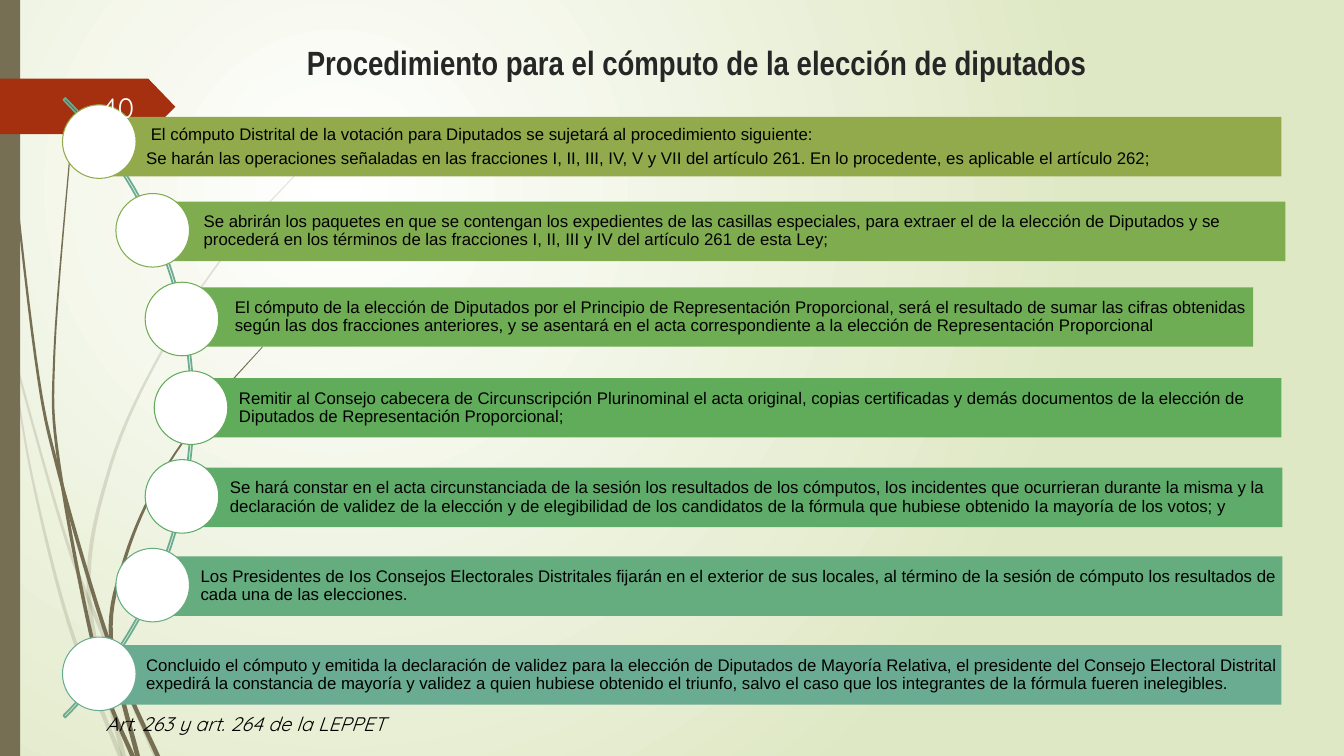
from lxml import etree
from pptx import Presentation
from pptx.dml.color import RGBColor
from pptx.enum.shapes import MSO_SHAPE
from pptx.enum.text import MSO_ANCHOR, PP_ALIGN
from pptx.oxml.ns import qn
from pptx.util import Inches, Pt

RECT, OVAL, ARC = MSO_SHAPE.RECTANGLE, MSO_SHAPE.OVAL, MSO_SHAPE.BLOCK_ARC
TOP, MIDDLE = MSO_ANCHOR.TOP, MSO_ANCHOR.MIDDLE
CENTER, LEFT, RIGHT = PP_ALIGN.CENTER, PP_ALIGN.LEFT, PP_ALIGN.RIGHT
OLIVE, RUST, WHITE = "766F54", "A53010", "FFFFFF"
CURVE_STEPS = 8


def paint(shape, fill=None, line=None, width=0.75):
    shape.shadow.inherit = False
    if fill:
        shape.fill.solid()
        shape.fill.fore_color.rgb = RGBColor.from_string(fill)
    else:
        shape.fill.background()
    if line:
        shape.line.color.rgb = RGBColor.from_string(line)
        shape.line.width = Pt(width)
    else:
        shape.line.fill.background()


def write(paragraph, text, size, font, color, align=LEFT, bold=False, italic=False):
    paragraph.alignment = align
    run = paragraph.add_run()
    run.text = text
    run.font.size, run.font.name = Pt(size), font
    run.font.bold, run.font.italic = bold, italic
    run.font.color.rgb = RGBColor.from_string(color)


prs = Presentation()
prs.slide_width, prs.slide_height = Inches(13.33), Inches(7.5)
slide = prs.slides.add_slide(prs.slide_layouts[5])
shapes = slide.shapes

# Background: radial glow centred in the upper left
backdrop = slide.background.fill
backdrop.gradient()
for stop, color in zip(backdrop.gradient_stops, (WHITE, "DFE8C4")):
    stop.color.rgb = RGBColor.from_string(color)
gradient = backdrop._xPr.find(qn("a:gradFill"))
gradient.remove(gradient.find(qn("a:lin")))
glow = etree.SubElement(gradient, qn("a:path"), path="circle")
etree.SubElement(glow, qn("a:fillToRect"), l="50000", t="50000", r="100000", b="100000")

# Grass blades: opacity, then points of a smooth stem that widens downwards
blades = [
    (20, [(0, 2.9), (.15, 3.6), (.6, 5.22), (.9, 6.05), (1.52, 7.5)]),
    (20, [(.11, 3.5), (.3, 4.7), (.67, 6.2), (1.17, 7.5)]),
    (20, [(3.12, 1.53), (2.28, 2.45), (1.59, 3.49), (1.08, 4.62), (.86, 5.9), (1.2, 7.5)]),
    (100, [(.03, 0), (.07, 1.1), (.34, 3.55), (.57, 4.7), (1.07, 6.4), (1.54, 7.5)]),
    (100, [(.7, 1.41), (.53, 3.49), (.57, 4.6), (.95, 6.58), (1.29, 7.5)]),
    (100, [(2.6, 3.44), (2.05, 4.06), (1.57, 4.75), (1.23, 5.52), (1.08, 6.33), (1.34, 7.5)]),
]
for opacity, stem in blades:
    padded = [stem[0], *stem, stem[-1]]
    curve = [stem[0]]
    for a, b, c, d in zip(padded, padded[1:], padded[2:], padded[3:]):
        for step in range(1, CURVE_STEPS + 1):
            t = step / CURVE_STEPS
            curve.append([b[k] + t * (c[k] - a[k]) / 2
                          + t * t * (a[k] - 2.5 * b[k] + 2 * c[k] - d[k] / 2)
                          + t ** 3 * (3 * (b[k] - c[k]) + d[k] - a[k]) / 2 for k in (0, 1)])
    right_edge = [(x + 0.01 + 0.04 * i / len(curve), y) for i, (x, y) in enumerate(curve)]
    builder = shapes.build_freeform(Inches(stem[0][0]), Inches(stem[0][1]))
    builder.add_line_segments([(Inches(x), Inches(y)) for x, y in curve[1:] + right_edge[::-1]])
    grass = builder.convert_to_shape()
    paint(grass, OLIVE)
    tint = grass.fill._xPr.find(".//" + qn("a:srgbClr"))
    etree.SubElement(tint, qn("a:alpha"), val=str(opacity * 1000))

# Side band and page-number tab
paint(shapes.add_shape(RECT, 0, 0, Inches(0.2), Inches(7.5)), OLIVE)
builder = shapes.build_freeform(0, Inches(0.78))
builder.add_line_segments([(Inches(x), Inches(y)) for x, y in
                           [(1.47, .78), (1.74, 1.06), (1.47, 1.33), (0, 1.33)]])
paint(builder.convert_to_shape(), RUST)

# Title
title = shapes.title
title.left, title.top, title.width, title.height = map(Inches, (1.68, 0.37, 9.97, 0.81))
title.text_frame.vertical_anchor = TOP
title.text_frame.margin_left = Inches(0.59)
write(title.text_frame.paragraphs[0], "Procedimiento para el cómputo de la elección de diputados",
      24, "Arial Narrow", "262626", CENTER, bold=True)

# Arc that links the steps
arc = shapes.add_shape(ARC, *map(Inches, (-6.77, -0.3, 8.69, 8.69)))
for i, value in enumerate((189, 27, 0.003)):
    arc.adjustments[i] = value
paint(arc, line="6AAC91", width=1.25)

# Steps: bar left, top, width, circle left, colour, paragraphs
steps = [
    (0.98, 1.16, 11.73, 0.62, "92AA4C", [
        " El cómputo Distrital de la votación para Diputados se sujetará al procedimiento siguiente:",
        "Se harán las operaciones señaladas en las fracciones I, II, III, IV, V y VII del artículo 261. En lo procedente, es aplicable el artículo 262;"]),
    (1.55, 2, 11.2, 1.15, "80AC50", ["Se abrirán los paquetes en que se contengan los expedientes de las casillas especiales, para extraer el de la elección de Diputados y se procederá en los términos de las fracciones I, II, III y IV del artículo 261 de esta Ley;"]),
    (1.86, 2.85, 10.57, 1.44, "6FAD54", ["El cómputo de la elección de Diputados por el Principio de Representación Proporcional, será el resultado de sumar las cifras obtenidas según las dos fracciones anteriores, y se asentará en el acta correspondiente a la elección de Representación Proporcional"]),
    (1.9, 3.75, 10.81, 1.53, "60AC5A", ["Remitir al Consejo cabecera de Circunscripción Plurinominal el acta original, copias certificadas y demás documentos de la elección de Diputados de Representación Proporcional;"]),
    (1.81, 4.64, 10.91, 1.44, "5FAC6A", ["Se hará constar en el acta circunstanciada de la sesión los resultados de los cómputos, los incidentes que ocurrieran durante la misma y la declaración de validez de la elección y de elegibilidad de los candidatos de la fórmula que hubiese obtenido Ia mayoría de los votos; y"]),
    (1.52, 5.52, 11.2, 1.15, "65AC7F", ["Los Presidentes de Ios Consejos Electorales Distritales fijarán en el exterior de sus locales, al término de la sesión de cómputo los resultados de cada una de las elecciones."]),
    (0.98, 6.4, 11.73, 0.62, "6AAC91", ["Concluido el cómputo y emitida la declaración de validez para la elección de Diputados de Mayoría Relativa, el presidente del Consejo Electoral Distrital expedirá la constancia de mayoría y validez a quien hubiese obtenido el triunfo, salvo el caso que los integrantes de la fórmula fueren inelegibles."]),
]
for i, (left, top, width, circle_left, color, texts) in enumerate(steps):
    bar = shapes.add_shape(RECT, *map(Inches, (left, top, width, 0.59)))
    paint(bar, color)
    frame = bar.text_frame
    frame.word_wrap, frame.vertical_anchor = True, MIDDLE
    frame.margin_left = Inches(0.47)
    frame.margin_right = frame.margin_top = frame.margin_bottom = Inches(0.03)
    for j, text in enumerate(texts):
        paragraph = frame.add_paragraph() if j else frame.paragraphs[0]
        paragraph.line_spacing, paragraph.space_after = 0.9, Pt(4.2)
        write(paragraph, text, 12, "Arial", "000000")
    circle = shapes.add_shape(OVAL, *map(Inches, (circle_left, 1.04 + 0.88 * i, 0.73, 0.73)))
    paint(circle, WHITE, color)

# Legal reference and page number
reference = shapes.add_textbox(*map(Inches, (0.95, 7.01, 4.63, 0.34))).text_frame
reference.word_wrap = True
write(reference.paragraphs[0], "Art. 263 y art. 264 de la LEPPET", 14, "Quicksand", "000000", italic=True)
page = shapes.add_textbox(*map(Inches, (0.58, 0.86, 0.85, 0.4))).text_frame
page.word_wrap, page.vertical_anchor = True, MIDDLE
write(page.paragraphs[0], "40", 20, "Quicksand", "FEFFFF", RIGHT)

prs.save("out.pptx")
